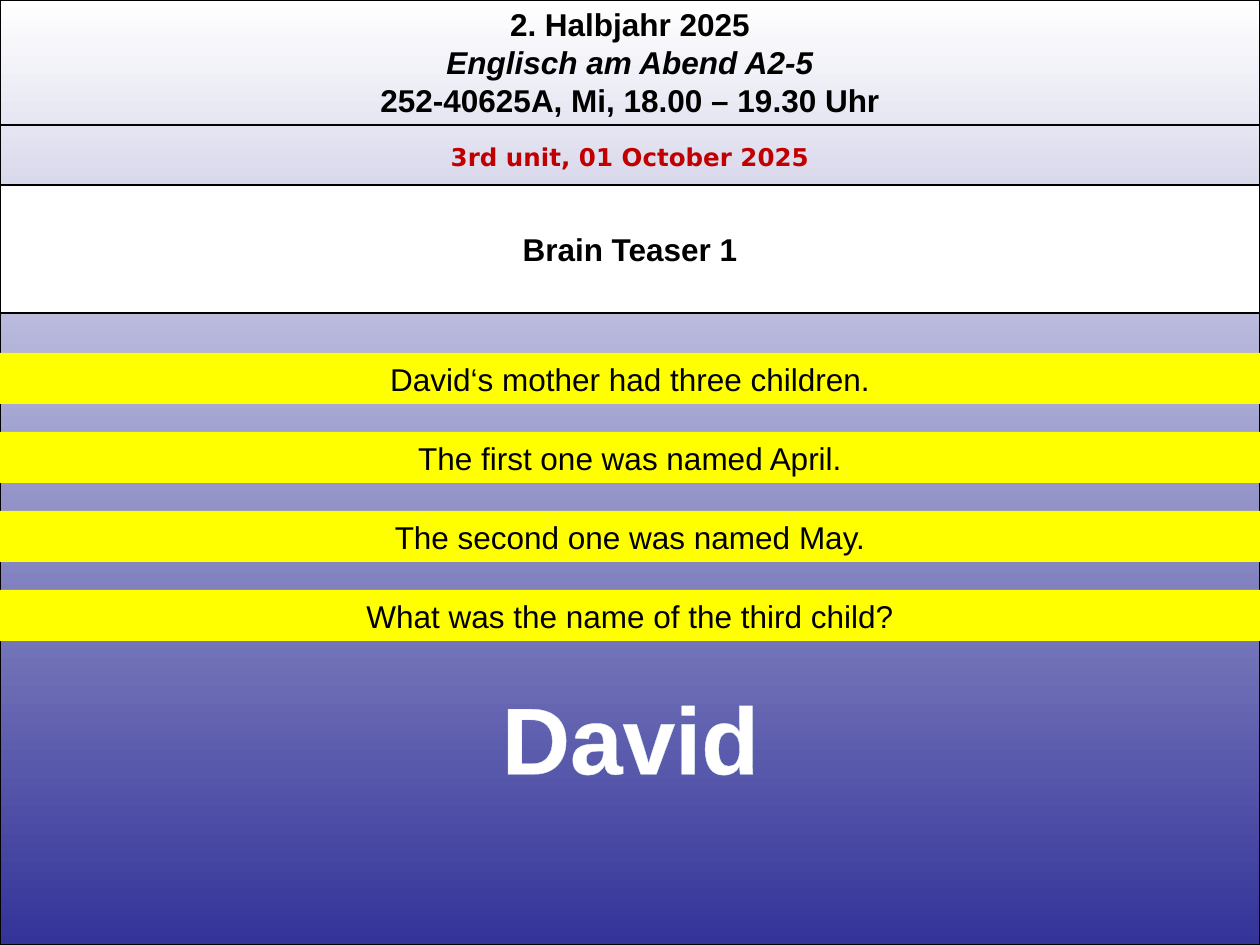
from lxml import etree
from pptx import Presentation
from pptx.dml.color import RGBColor
from pptx.enum.shapes import MSO_CONNECTOR, MSO_SHAPE
from pptx.enum.text import MSO_ANCHOR, PP_ALIGN
from pptx.oxml import parse_xml
from pptx.oxml.ns import nsdecls, qn
from pptx.util import Emu, Pt

RECT = MSO_SHAPE.RECTANGLE
STRAIGHT = MSO_CONNECTOR.STRAIGHT
MIDDLE = MSO_ANCHOR.MIDDLE
CENTER = PP_ALIGN.CENTER

BLACK = RGBColor(0x00, 0x00, 0x00)
WHITE = RGBColor(0xFF, 0xFF, 0xFF)
INDIGO = RGBColor(0x33, 0x33, 0x99)
YELLOW = RGBColor(0xFF, 0xFF, 0x00)
RED = RGBColor(0xC0, 0x00, 0x00)
PALE_BLUE = RGBColor(0xDA, 0xED, 0xEF)

WIDTH, HEIGHT = 1260, 945
CLUE_TOP, CLUE_PITCH, CLUE_HEIGHT = 353, 79, 51
CLUES = [
    "David‘s mother had three children.",
    "The first one was named April.",
    "The second one was named May.",
    "What was the name of the third child?",
]


def px(n):
    return Emu(n * 914400 // 126)


def add_rect(s, x, y, w, h, fill=None, line=None):
    sp = s.shapes.add_shape(RECT, px(x), px(y), px(w), px(h))
    sp.shadow.inherit = False
    if fill is not None:
        sp.fill.solid()
        sp.fill.fore_color.rgb = fill
    if line is None:
        sp.line.fill.background()
    else:
        sp.line.color.rgb = line
        sp.line.width = Pt(0.75)
    return sp


def add_background(s):
    sp = add_rect(s, 0, 0, WIDTH, HEIGHT, line=BLACK)
    sp.fill.gradient()
    sp.fill.gradient_angle = 270
    for stop, color, position in zip(sp.fill.gradient_stops, (WHITE, INDIGO), (0, 1)):
        stop.color.rgb = color
        stop.position = position


def add_rule(s, y):
    line = s.shapes.add_connector(STRAIGHT, 0, px(y), px(WIDTH), px(y))
    line.line.color.rgb = BLACK
    line.line.width = Pt(0.75)
    etree.SubElement(line._element.spPr, qn("a:effectLst"))


def write(sp, lines, size=18, color=BLACK, bold=False, font="Arial", wrap=True):
    """Fill the shape with centred (text, italic) lines and return the last run."""
    tf = sp.text_frame
    tf.word_wrap = wrap
    tf.vertical_anchor = MIDDLE
    for i, (text, italic) in enumerate(lines):
        p = tf.paragraphs[0] if i == 0 else tf.add_paragraph()
        p.alignment = CENTER
        r = p.add_run()
        r.text = text
        r.font.name = font
        r.font.size = Pt(size)
        r.font.bold = bold
        r.font.italic = italic
        r.font.color.rgb = color
    return r


def add_text(s, x, y, w, h, lines, **style):
    sp = s.shapes.add_textbox(px(x), px(y), px(w), px(h))
    return write(sp, lines, **style)


def outline_letters(r, color, width):
    ln = parse_xml(
        f'<a:ln {nsdecls("a")} w="{Pt(width)}"><a:solidFill>'
        f'<a:srgbClr val="{color}"/></a:solidFill></a:ln>'
    )
    r._r.get_or_add_rPr().insert(0, ln)


def main():
    prs = Presentation()
    prs.slide_width, prs.slide_height = px(WIDTH), px(HEIGHT)
    s = prs.slides.add_slide(prs.slide_layouts[6])

    add_background(s)
    course = [
        ("2. Halbjahr 2025", False),
        ("Englisch am Abend A2-5", True),
        ("252-40625A, Mi, 18.00 – 19.30 Uhr", False),
    ]
    add_text(s, 0, -1, WIDTH, 126, course, bold=True)
    add_rule(s, 125)

    title = add_rect(s, 0, 185, WIDTH, 128, WHITE, BLACK)
    write(title, [("Brain Teaser 1", False)], bold=True)
    add_text(s, 0, 135, WIDTH, 43, [("3rd unit, 01 October 2025", False)],
             size=14, color=RED, bold=True, font="DejaVu Sans")

    for i, clue in enumerate(CLUES):
        band = add_rect(s, 0, CLUE_TOP + i * CLUE_PITCH, WIDTH, CLUE_HEIGHT, YELLOW)
        write(band, [(clue, False)])

    answer = add_text(s, 488, 673, 285, 127, [("David", False)],
                      size=54, color=WHITE, bold=True, wrap=False)
    outline_letters(answer, PALE_BLUE, 0.8)

    prs.save("out.pptx")


if __name__ == "__main__":
    main()
